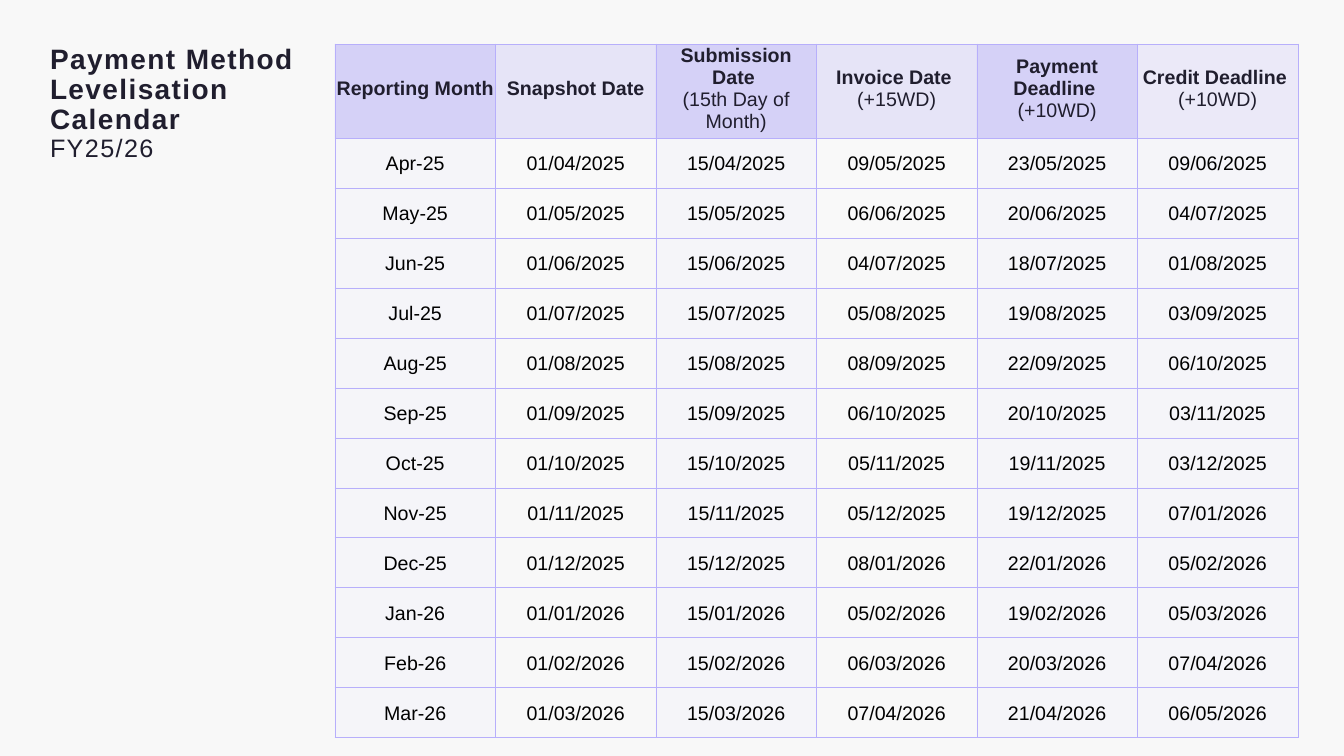
from lxml.etree import SubElement as Sub
from pptx import Presentation
from pptx.dml.color import RGBColor as Rgb
from pptx.enum.text import MSO_ANCHOR as Anchor, MSO_AUTO_SIZE as Fit, PP_ALIGN as Align
from pptx.oxml.ns import qn
from pptx.util import Pt

SCALE = 914400 / 100.8
HEX = {
    "page": "F8F8F8", "ink": "201E2E", "black": "000000", "white": "FFFFFF",
    "violet": "4C37F4", "lilac": "B7AFFB", "pale": "F0EFFE",
}

# Each heading: bold line, plain line, fill colour, opacity in percent
HEADS = [
    ("Reporting Month", "", "violet", 20),
    ("Snapshot Date", "", "violet", 10),
    ("Submission Date ", "(15th Day of Month)", "violet", 20),
    ("Invoice Date ", "(+15WD)", "violet", 10),
    ("Payment Deadline ", "(+10WD)", "violet", 20),
    ("Credit Deadline ", "(+10WD)", "lilac", 20),
]

# Invoice, payment and credit dates for each reporting month
DATES = {
    "Apr-25": ("09/05/2025", "23/05/2025", "09/06/2025"),
    "May-25": ("06/06/2025", "20/06/2025", "04/07/2025"),
    "Jun-25": ("04/07/2025", "18/07/2025", "01/08/2025"),
    "Jul-25": ("05/08/2025", "19/08/2025", "03/09/2025"),
    "Aug-25": ("08/09/2025", "22/09/2025", "06/10/2025"),
    "Sep-25": ("06/10/2025", "20/10/2025", "03/11/2025"),
    "Oct-25": ("05/11/2025", "19/11/2025", "03/12/2025"),
    "Nov-25": ("05/12/2025", "19/12/2025", "07/01/2026"),
    "Dec-25": ("08/01/2026", "22/01/2026", "05/02/2026"),
    "Jan-26": ("05/02/2026", "19/02/2026", "05/03/2026"),
    "Feb-26": ("06/03/2026", "20/03/2026", "07/04/2026"),
    "Mar-26": ("07/04/2026", "21/04/2026", "06/05/2026"),
}


def px(n):
    return round(n * SCALE)


def tint(name):
    return Rgb.from_string(HEX[name])


def put(para, text, size=14, bold=False, color="ink", align=Align.CENTER, gap=0):
    """Add a run of text to a paragraph; gap is letter spacing in points."""
    para.alignment = align
    run = para.add_run()
    run.text = text
    font = run.font
    font.name, font.size, font.bold = "Arial", Pt(size), bold
    font.color.rgb = tint(color)
    if gap:
        run._r.get_or_add_rPr().set("spc", str(gap * 100))


def inset(item, left, top, right, bottom):
    item.margin_left, item.margin_top = px(left), px(top)
    item.margin_right, item.margin_bottom = px(right), px(bottom)


def edge(cell):
    props = cell._tc.get_or_add_tcPr()
    for side in ("lnL", "lnR", "lnT", "lnB"):
        line = Sub(props, qn("a:" + side), w=str(Pt(0.5)))
        fill = Sub(line, qn("a:solidFill"))
        Sub(fill, qn("a:srgbClr"), val=HEX["lilac"])


def paint(cell, color, alpha=100):
    if color is None:
        cell.fill.background()
        return
    cell.fill.solid()
    cell.fill.fore_color.rgb = tint(color)
    if alpha < 100:
        shade = cell._tc.tcPr.find(qn("a:solidFill"))[0]
        Sub(shade, qn("a:alpha"), val=str(alpha * 1000))


def shade_of(row, col):
    """Fill of a date cell: the snapshot and invoice columns stay light."""
    if col not in (1, 3):
        return "pale", 30
    if row <= 2:
        return "white", 20
    return ("page", 100) if row <= 5 else (None, 100)


def add_title(slide, x, y, w, h):
    title = slide.shapes.title
    title.left, title.top, title.width, title.height = map(px, (x, y, w, h))
    frame = title.text_frame
    frame.word_wrap, frame.auto_size = True, Fit.NONE
    frame.vertical_anchor = Anchor.BOTTOM
    inset(frame, 0, 0, 0, 0)
    para = frame.paragraphs[0]
    para.line_spacing = 0.9
    style = {"align": Align.LEFT, "gap": 1}
    put(para, "Payment Method Levelisation Calendar ", size=20, bold=True, **style)
    para.add_line_break()
    Sub(para._p.find(qn("a:br")), qn("a:rPr"), sz="2000")
    put(para, "FY25/26", size=18, **style)


def add_dates(slide, x, y, w, h):
    box = map(px, (x, y, w, h))
    table = slide.shapes.add_table(len(DATES) + 1, len(HEADS), *box).table
    table.first_row = table.horz_banding = False
    for i, row in enumerate(table.rows):
        row.height = px(50 if i else 74)

    # Heading row
    for col, (name, note, color, alpha) in enumerate(HEADS):
        cell = table.cell(0, col)
        edge(cell)
        paint(cell, color, alpha)
        inset(cell, 1, 1, 1, 5)
        cell.vertical_anchor = Anchor.MIDDLE
        put(cell.text_frame.paragraphs[0], name, bold=True)
        if note:
            put(cell.text_frame.add_paragraph(), note)

    # Month rows: April is month 4, and the year turns after December
    for row, (label, dates) in enumerate(DATES.items(), 1):
        month = f"{(row + 2) % 12 + 1:02}/20{label[-2:]}"
        texts = (label, f"01/{month}", f"15/{month}", *dates)
        for col, text in enumerate(texts):
            cell = table.cell(row, col)
            edge(cell)
            paint(cell, *shade_of(row, col))
            inset(cell, 1, 1, 1, 0)
            cell.vertical_anchor = Anchor.MIDDLE
            put(cell.text_frame.paragraphs[0], text, color="black")


def main():
    deck = Presentation()
    deck.slide_width, deck.slide_height = px(1344), px(756)
    slide = deck.slides.add_slide(deck.slide_layouts[5])
    slide.background.fill.solid()
    slide.background.fill.fore_color.rgb = tint("page")
    add_dates(slide, 335, 44, 963, 675)
    add_title(slide, 50, 44, 260, 119)
    deck.save("out.pptx")


if __name__ == "__main__":
    main()
